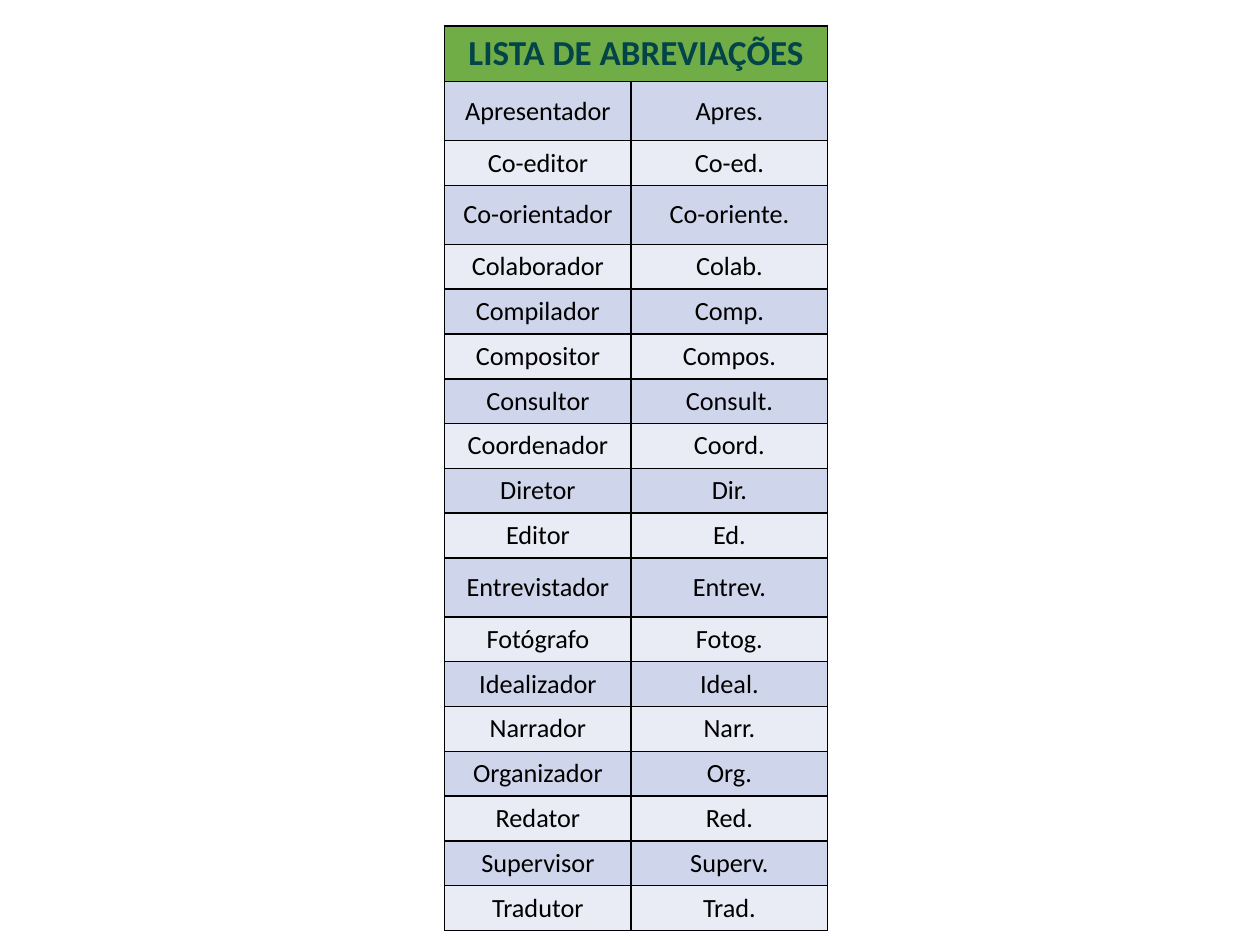
from dataclasses import dataclass

from lxml import etree
from pptx import Presentation
from pptx.dml.color import RGBColor as RGB
from pptx.enum.text import MSO_ANCHOR as ANCHOR, PP_ALIGN as ALIGN
from pptx.oxml.ns import qn
from pptx.util import Pt


@dataclass
class Theme:
    font: str = "Calibri"
    title_size: float = 20
    body_size: float = 15
    title: str = "024447"
    text: str = "000000"
    border: str = "000000"
    header: str = "70AD47"
    bands: tuple = ("CFD5EA", "E9EBF5")


theme = Theme()


def write_cell(cell, text, *, fill, size=theme.body_size, color=theme.text, bold=False):
    cell.vertical_anchor = ANCHOR.MIDDLE
    p = cell.text_frame.paragraphs[0]
    p.alignment = ALIGN.CENTER
    r = p.add_run()
    r.text = text
    r.font.name, r.font.size, r.font.bold = theme.font, Pt(size), bold
    r.font.color.rgb = RGB.from_string(color)
    cell.fill.solid()
    cell.fill.fore_color.rgb = RGB.from_string(fill)


def add_borders(cell):
    # Border elements must come before the cell fill
    tc_pr = cell._tc.get_or_add_tcPr()
    for i, side in enumerate(("lnL", "lnR", "lnT", "lnB")):
        ln = etree.Element(qn(f"a:{side}"), w=str(Pt(1)))
        solid = etree.SubElement(ln, qn("a:solidFill"))
        etree.SubElement(solid, qn("a:srgbClr"), val=theme.border)
        tc_pr.insert(i, ln)


abbreviations = [
    ("Apresentador", "Apres."),
    ("Co-editor", "Co-ed."),
    ("Co-orientador", "Co-oriente."),
    ("Colaborador", "Colab."),
    ("Compilador", "Comp."),
    ("Compositor", "Compos."),
    ("Consultor", "Consult."),
    ("Coordenador", "Coord."),
    ("Diretor", "Dir."),
    ("Editor", "Ed."),
    ("Entrevistador", "Entrev."),
    ("Fotógrafo", "Fotog."),
    ("Idealizador", "Ideal."),
    ("Narrador", "Narr."),
    ("Organizador", "Org."),
    ("Redator", "Red."),
    ("Supervisor", "Superv."),
    ("Tradutor", "Trad."),
]
tall_roles = {"Apresentador", "Co-orientador", "Entrevistador"}
col_widths = (106.6, 112.3)
row_heights = [31.6] + [33.7 if role in tall_roles else 25.6 for role, _ in abbreviations]

prs = Presentation()
prs.slide_width, prs.slide_height = Pt(720), Pt(540)
s = prs.slides.add_slide(prs.slide_layouts[6])

# Table grid
table = s.shapes.add_table(
    len(row_heights), len(col_widths),
    Pt(254.1), Pt(15), Pt(sum(col_widths)), Pt(sum(row_heights)),
).table
for column, width in zip(table.columns, col_widths):
    column.width = Pt(width)
for row, height in zip(table.rows, row_heights):
    row.height = Pt(height)

# Header across both columns
header = table.cell(0, 0)
header.merge(table.cell(0, 1))
write_cell(header, "LISTA DE ABREVIAÇÕES", fill=theme.header,
           size=theme.title_size, color=theme.title, bold=True)

# Roles and their abbreviations, in alternating bands
for i, pair in enumerate(abbreviations):
    for j, text in enumerate(pair):
        write_cell(table.cell(i + 1, j), text, fill=theme.bands[i % 2])

for cell in table.iter_cells():
    add_borders(cell)

prs.save("out.pptx")
